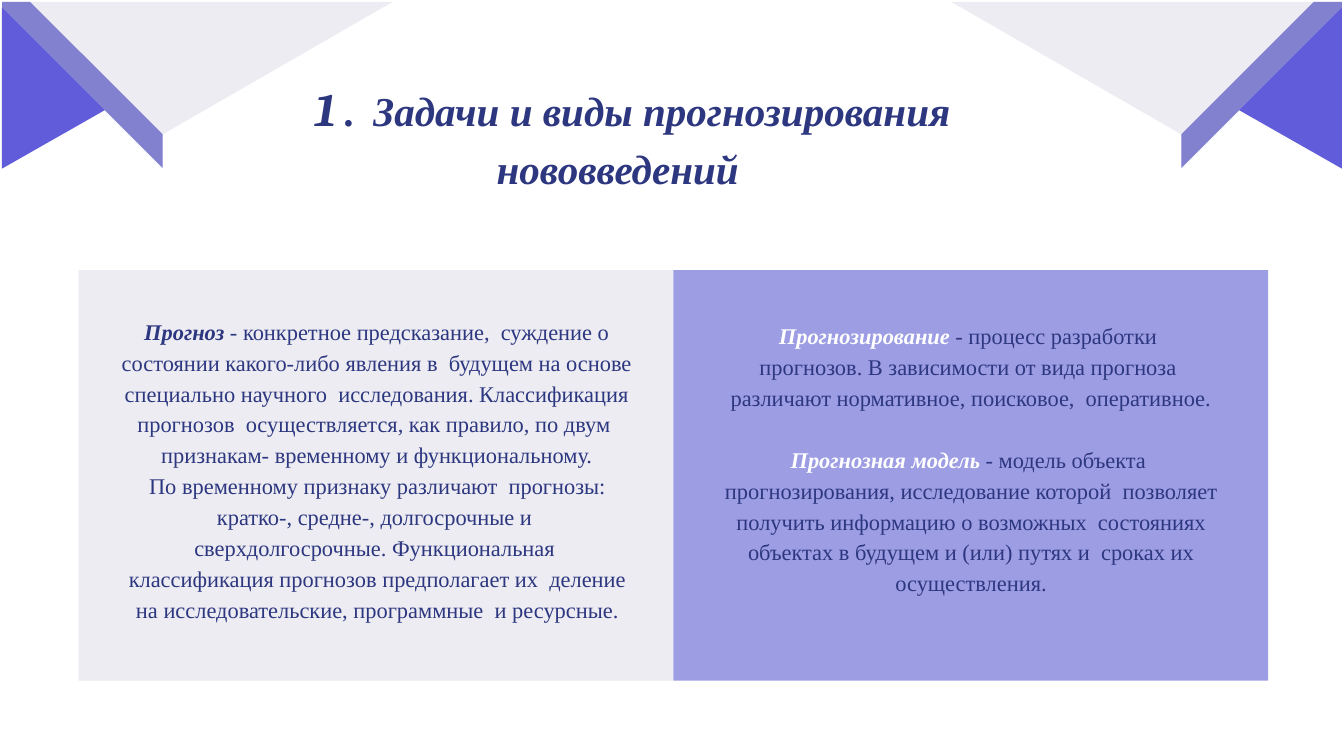
from dataclasses import dataclass

from pptx import Presentation
from pptx import util as u
from pptx.dml import color
from pptx.enum import shapes, text


@dataclass(frozen=True)
class Theme:
    pale: str = "ECECF2"
    lilac: str = "9D9DE3"
    violet: str = "8281D0"
    indigo: str = "615DDA"
    navy: str = "2D3780"
    white: str = "FFFFFF"
    serif: str = "Times New Roman"
    number_font: str = "Cambria"
    number_size: int = 50
    title_size: int = 44
    body_size: int = 24


theme = Theme()


def paint(shape, fill):
    shape.shadow.inherit = False
    shape.fill.solid()
    shape.fill.fore_color.rgb = color.RGBColor.from_string(fill)
    shape.line.fill.background()


def add_span(para, wording, size, ink, strong, font=theme.serif):
    span = para.add_run()
    span.text = wording
    span.font.name = font
    span.font.size = u.Pt(size)
    span.font.bold = span.font.italic = strong
    span.font.color.rgb = color.RGBColor.from_string(ink)
    return span


deck = Presentation()
deck.slide_width, deck.slide_height = u.Inches(20), u.Inches(11.25)
page = deck.slides.add_slide(deck.slide_layouts[5])

# Two panels side by side
panel_width = 8.85
for column, fill in enumerate((theme.pale, theme.lilac)):
    panel = page.shapes.add_shape(
        shapes.MSO_SHAPE.RECTANGLE,
        u.Inches(1.17 + column * panel_width), u.Inches(4.02),
        u.Inches(panel_width), u.Inches(6.11))
    paint(panel, fill)

# Corner ornaments: the left one, then its mirror image
ornament = [
    (theme.pale, [(5.84, 0.03), (0.03, 0.03), (0.03, 0.11), (2.42, 2.5), (2.42, 2)]),
    (theme.violet, [(0.45, 0.03), (0.03, 0.03), (0.03, 0.11), (2.42, 2.5), (2.42, 2)]),
    (theme.indigo, [(0.03, 0.11), (0.03, 2.51), (1.56, 1.64)]),
]
for mirrored in (False, True):
    for fill, corners in ornament:
        points = [(u.Inches(20 - x if mirrored else x), u.Inches(y)) for x, y in corners]
        outline = page.shapes.build_freeform(*points[0], scale=1.0)
        outline.add_line_segments(points[1:], close=True)
        paint(outline.convert_to_shape(), fill)

# Title with a hanging number
title = page.shapes.title
title.left, title.top = u.Inches(4.67), u.Inches(1.04)
title.width, title.height = u.Inches(11.24), u.Inches(1.85)
para = title.text_frame.paragraphs[0]
para.alignment = text.PP_ALIGN.LEFT
para.line_spacing = 1.16
para.space_before = u.Pt(0.9)
indents = para._p.get_or_add_pPr()
indents.set("marL", str(u.Inches(2.72)))
indents.set("indent", str(u.Inches(-2.7)))
number = add_span(para, "1", theme.number_size, theme.navy, True, theme.number_font)
dot = add_span(para, " .  ", theme.title_size, theme.navy, True)
add_span(para, "Задачи и виды прогнозирования  нововведений",
         theme.title_size, theme.navy, True)
# Tighten the number towards its dot, in hundredths of a point
number.font._element.set("spc", "-1420")
dot.font._element.set("spc", "-120")

# Definitions: place, term colour, then (left, right indent, space before, term, wording)
definitions = [
    ((1.77, 4.66, 7.66, 4.69), theme.navy, [
        (0.01, 0, 1, "Прогноз ",
         "- конкретное предсказание,  суждение о состоянии какого-либо явления в  "
         "будущем на основе специально научного  исследования. Классификация "
         "прогнозов  осуществляется, как правило, по двум  признакам- временному и "
         "функциональному."),
        (0.03, 0, 0, "",
         "По временному признаку различают  прогнозы: кратко-, средне-, долгосрочные "
         "и  сверхдолгосрочные. Функциональная  классификация прогнозов предполагает "
         "их  деление на исследовательские, программные  и ресурсные."),
    ]),
    ((10.47, 4.72, 7.95, 4.16), theme.white, [
        (0.34, 0.34, 1, "Прогнозирование ",
         "- процесс разработки  прогнозов. В зависимости от вида прогноза  различают "
         "нормативное, поисковое,  оперативное."),
        (0.01, 0, 33.5, "Прогнозная модель ",
         "- модель объекта  прогнозирования, исследование которой  позволяет получить "
         "информацию о возможных  состояниях объектах в будущем и (или) путях и  "
         "сроках их осуществления."),
    ]),
]
frames = [title.text_frame]
for place, term_ink, entries in definitions:
    box = page.shapes.add_textbox(*map(u.Inches, place))
    frames.append(box.text_frame)
    for index, (left, right, gap, term, wording) in enumerate(entries):
        para = box.text_frame.add_paragraph() if index else box.text_frame.paragraphs[0]
        para.alignment = text.PP_ALIGN.CENTER
        para.line_spacing = 1.15
        para.space_before = u.Pt(gap)
        indents = para._p.get_or_add_pPr()
        indents.set("marL", str(u.Inches(left)))
        indents.set("marR", str(u.Inches(right)))
        if term:
            add_span(para, term, theme.body_size, term_ink, True)
        add_span(para, wording, theme.body_size, theme.navy, False)

# Shared frame settings
for frame in frames:
    frame.word_wrap = True
    frame.auto_size = text.MSO_AUTO_SIZE.SHAPE_TO_FIT_TEXT
    frame.vertical_anchor = text.MSO_ANCHOR.TOP
    frame.margin_left = frame.margin_right = frame.margin_bottom = 0
    frame.margin_top = u.Inches(0.01)

deck.save("out.pptx")
